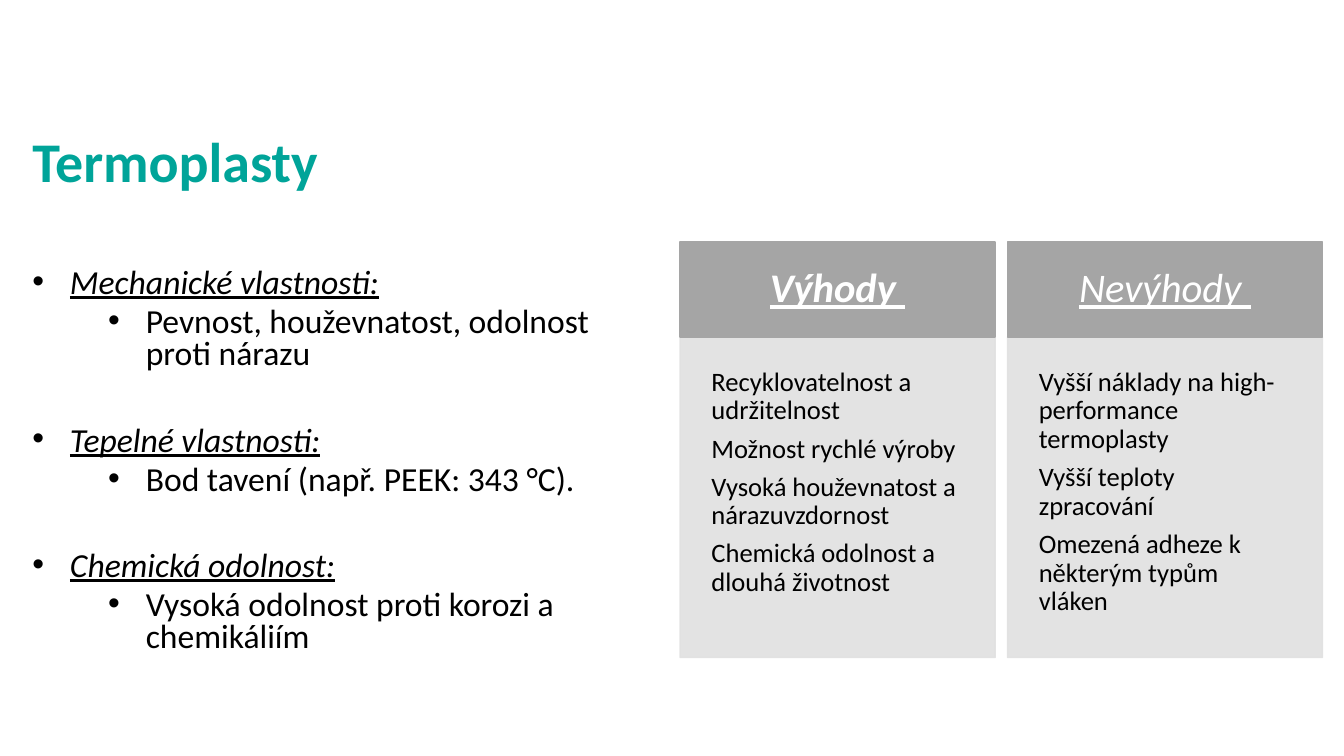
from lxml.etree import SubElement
from pptx import Presentation
from pptx.dml.color import RGBColor
from pptx.enum.shapes import MSO_SHAPE
from pptx.enum.text import MSO_ANCHOR, MSO_AUTO_SIZE, PP_ALIGN
from pptx.oxml.ns import qn
from pptx.util import Cm, Pt

TEAL = RGBColor(0x00, 0xA4, 0x99)
BLACK = RGBColor(0x00, 0x00, 0x00)
WHITE = RGBColor(0xFF, 0xFF, 0xFF)
GREY = RGBColor(0xA5, 0xA5, 0xA5)
PALE = RGBColor(0xE1, 0xE1, 0xE1)
FONT = "Calibri"

TRAITS = [
    ("Mechanické vlastnosti:", "Pevnost, houževnatost, odolnost proti nárazu"),
    ("Tepelné vlastnosti:", "Bod tavení (např. PEEK: 343 °C)."),
    ("Chemická odolnost:", "Vysoká odolnost proti korozi a chemikáliím"),
]
CARDS = [
    ("Výhody ", True, [
        "Recyklovatelnost a udržitelnost",
        "Možnost rychlé výroby",
        "Vysoká houževnatost a nárazuvzdornost",
        "Chemická odolnost a dlouhá životnost",
    ]),
    ("Nevýhody ", False, [
        "Vyšší náklady na high-performance termoplasty",
        "Vyšší teploty zpracování",
        "Omezená adheze k některým typům vláken",
    ]),
]


def place(shape, left, top, width, height):
    shape.left, shape.top = Cm(left), Cm(top)
    shape.width, shape.height = Cm(width), Cm(height)


def add_run(para, text, size, color, bold=False, mark=False):
    """Add one run; mark makes it italic and underlined."""
    run = para.add_run()
    run.text = text
    font = run.font
    font.name, font.size, font.bold = FONT, Pt(size), bold
    font.italic = font.underline = mark
    font.color.rgb = color


def next_para(frame, first):
    return frame.paragraphs[0] if first else frame.add_paragraph()


def add_title(slide, text):
    title = slide.shapes.title
    place(title, 0.56, 3.02, 32.77, 2.01)
    frame = title.text_frame
    frame.auto_size = MSO_AUTO_SIZE.NONE
    frame.vertical_anchor = MSO_ANCHOR.BOTTOM
    para = frame.paragraphs[0]
    para.alignment = PP_ALIGN.LEFT
    para.line_spacing = 0.9
    add_run(para, text, 40, TEAL, bold=True)


def add_point(frame, text, level, before):
    para = next_para(frame, before == 0)
    props = para._p.get_or_add_pPr()
    props.set("marL", str(Cm(2.86 if level else 0.95)))
    props.set("indent", str(-Cm(0.95)))
    SubElement(props, qn("a:buFont")).set("typeface", "Arial")
    SubElement(props, qn("a:buChar")).set("char", "•")
    para.level = level
    para.line_spacing = 0.8
    para.space_before = Pt(before)
    add_run(para, text, 24, BLACK, mark=level == 0)


def add_list(slide, traits):
    body = slide.placeholders[1]
    place(body, 0.56, 5.51, 16.15, 11.71)
    frame = body.text_frame
    frame.auto_size = MSO_AUTO_SIZE.NONE
    frame.margin_top = Cm(1.26)
    for i, (head, text) in enumerate(traits):
        add_point(frame, head, 0, 38.4 if i else 0)
        add_point(frame, text, 1, 5)


def add_box(slide, spot, color, inset, anchor):
    box = slide.shapes.add_shape(MSO_SHAPE.RECTANGLE, 0, 0, 0, 0)
    place(box, *spot)
    box.shadow.inherit = False
    box.fill.solid()
    box.fill.fore_color.rgb = color
    box.line.color.rgb = color
    box.line.width = Pt(1)
    frame = box.text_frame
    frame.word_wrap = True
    frame.vertical_anchor = anchor
    frame.margin_left = frame.margin_right = Cm(inset)
    frame.margin_top = frame.margin_bottom = Cm(inset)
    return box


def fade(box, percent):
    """Set the opacity of fill and line."""
    for tone in box._element.spPr.iter(qn("a:srgbClr")):
        SubElement(tone, qn("a:alpha")).set("val", str(percent * 1000))


def add_card(slide, left, head, bold, items):
    width, top, split = 7.94, 6.1, 8.49
    # Pale body
    base = add_box(slide, (left, split, width, 8.08), PALE, 0.79,
                   MSO_ANCHOR.TOP)
    fade(base, 90)
    for i, item in enumerate(items):
        para = next_para(base.text_frame, i == 0)
        para.alignment = PP_ALIGN.LEFT
        para.line_spacing = 0.9
        para.space_after = Pt(6.65)
        add_run(para, item, 19, BLACK)
    # Grey header
    cap = add_box(slide, (left, top, width, split - top), GREY, 0.64,
                  MSO_ANCHOR.MIDDLE)
    para = cap.text_frame.paragraphs[0]
    para.alignment = PP_ALIGN.CENTER
    para.line_spacing = 0.9
    add_run(para, head, 29, WHITE, bold=bold, mark=True)


def main():
    deck = Presentation()
    deck.slide_width, deck.slide_height = Cm(33.87), Cm(19.05)
    slide = deck.slides.add_slide(deck.slide_layouts[1])
    add_title(slide, "Termoplasty")
    add_list(slide, TRAITS)
    # Pros and cons, side by side
    for i, card in enumerate(CARDS):
        add_card(slide, 17.14 + 8.25 * i, *card)
    deck.save("out.pptx")


if __name__ == "__main__":
    main()
